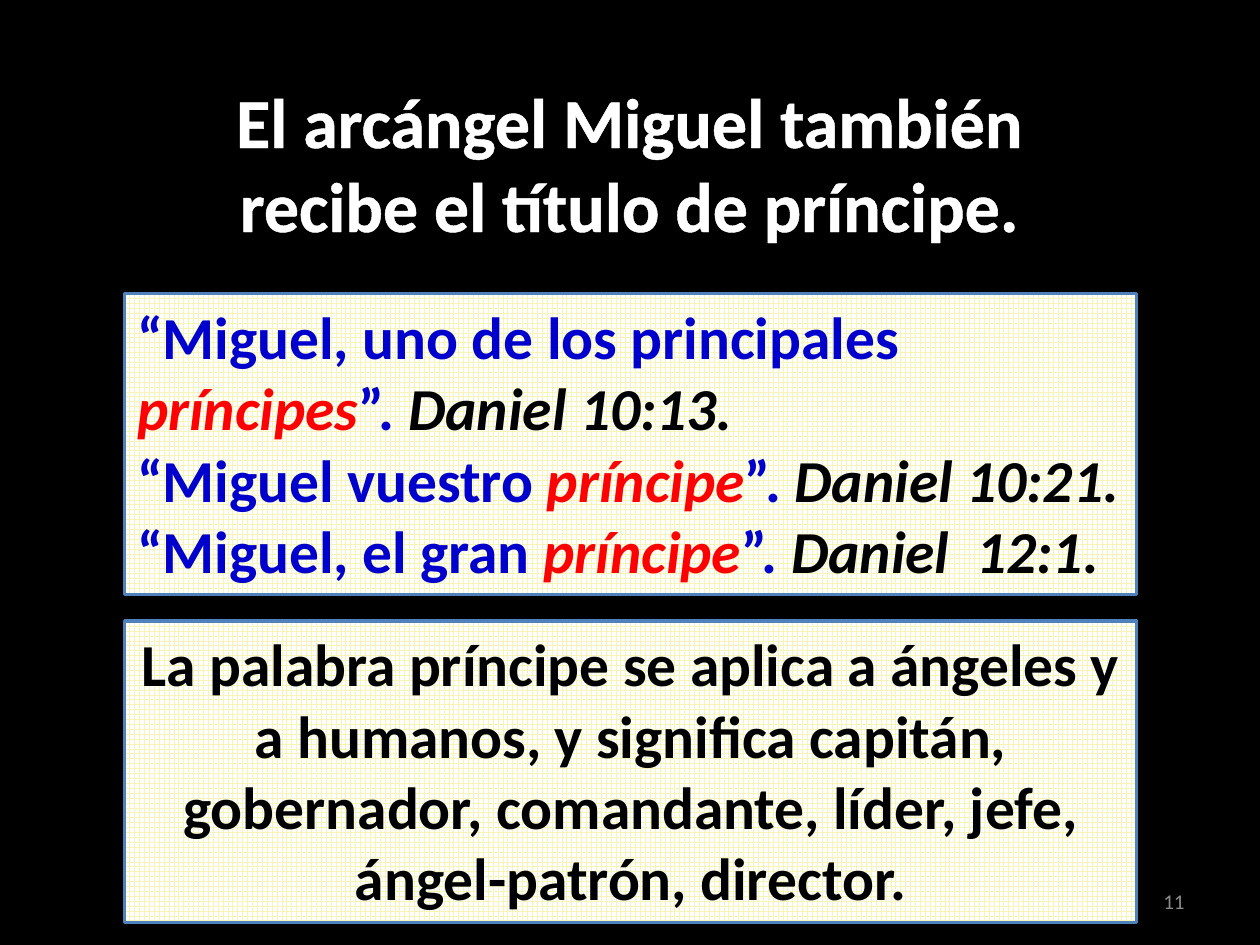
"""Build the slide on the archangel Michael's title of prince."""
from lxml.etree import SubElement
from pptx import Presentation
from pptx.dml.color import RGBColor
from pptx.enum.dml import MSO_PATTERN
from pptx.enum.shapes import MSO_SHAPE
from pptx.enum.text import MSO_ANCHOR, MSO_AUTO_SIZE, PP_ALIGN
from pptx.oxml import parse_xml
from pptx.oxml.ns import nsdecls
from pptx.util import Inches, Pt

COLORS = {
    "background": "000000",
    "title": "FFFFFF",
    "number": "8C8C8C",
    "quote": "0000CC",
    "prince": "FF0000",
    "reference": "000000",
    "grid": "F7F4B7",
    "paper": "FFFFFF",
    "border": "4F81BD",
}


def color(name):
    return RGBColor.from_string(COLORS[name])


def write(shape, paragraphs, size, alignment, outlined=True):
    text_frame = shape.text_frame
    text_frame.word_wrap = True
    text_frame.vertical_anchor = MSO_ANCHOR.TOP if outlined else MSO_ANCHOR.MIDDLE
    text_frame.auto_size = MSO_AUTO_SIZE.SHAPE_TO_FIT_TEXT if outlined else MSO_AUTO_SIZE.NONE
    for index, pieces in enumerate(paragraphs):
        paragraph = text_frame.add_paragraph() if index else text_frame.paragraphs[0]
        paragraph.alignment = alignment
        for text, role, italic in pieces:
            run = paragraph.add_run()
            run.text = text
            run.font.name = "Calibri"
            run.font.size = Pt(size)
            run.font.bold = outlined
            run.font.italic = italic
            run.font.color.rgb = color(role)
            if outlined:
                outline = parse_xml(
                    f'<a:ln {nsdecls("a")} w="{Pt(0.75)}"><a:solidFill>'
                    f'<a:srgbClr val="{COLORS[role]}"/></a:solidFill></a:ln>'
                )
                run.font._element.insert(0, outline)


presentation = Presentation()
presentation.slide_width = Inches(10)
presentation.slide_height = Inches(7.5)
width, height = presentation.slide_width, presentation.slide_height
slide = presentation.slides.add_slide(presentation.slide_layouts[6])
slide.background.fill.solid()
slide.background.fill.fore_color.rgb = color("background")

title = slide.shapes.add_textbox(
    Inches(1.6), Inches(0.57), Inches(6.79), Inches(1.45)
)
title_text = "El arcángel Miguel también recibe el título de príncipe."
write(title, [[(title_text, "title", False)]], 40, PP_ALIGN.CENTER)

number = slide.shapes.add_textbox(
    Inches(7.17), Inches(6.95), Inches(2.33), Inches(0.4)
)
write(number, [[("11", "number", False)]], 12, PP_ALIGN.RIGHT, outlined=False)

verses = [
    ("“Miguel, uno de los principales ", "príncipes", "Daniel 10:13."),
    ("“Miguel vuestro ", "príncipe", "Daniel 10:21."),
    ("“Miguel, el gran ", "príncipe", "Daniel  12:1."),
]
quotes = [
    [
        (opening, "quote", False),
        (prince, "prince", True),
        ("”. ", "quote", False),
        (reference, "reference", True),
    ]
    for opening, prince, reference in verses
]
meaning = (
    "La palabra príncipe se aplica a ángeles y a humanos, y significa capitán, "
    "gobernador, comandante, líder, jefe, ángel-patrón, director."
)
panels = [
    (quotes, PP_ALIGN.LEFT),
    ([[(meaning, "reference", False)]], PP_ALIGN.CENTER),
]
panel_left, panel_width = Inches(0.99), Inches(8.03)
panel_top, panel_height, panel_pitch = Inches(2.33), Inches(2.39), Inches(2.6)

for row, (paragraphs, alignment) in enumerate(panels):
    panel = slide.shapes.add_shape(
        MSO_SHAPE.RECTANGLE,
        panel_left,
        panel_top + row * panel_pitch,
        panel_width,
        panel_height,
    )
    panel.shadow.inherit = False
    panel.fill.patterned()
    panel.fill.pattern = MSO_PATTERN.LARGE_GRID
    panel.fill.fore_color.rgb = color("grid")
    panel.fill.back_color.rgb = color("paper")
    panel.line.color.rgb = color("border")
    panel.line.width = Pt(2)
    write(panel, paragraphs, 34, alignment)

presentation.save("out.pptx")
